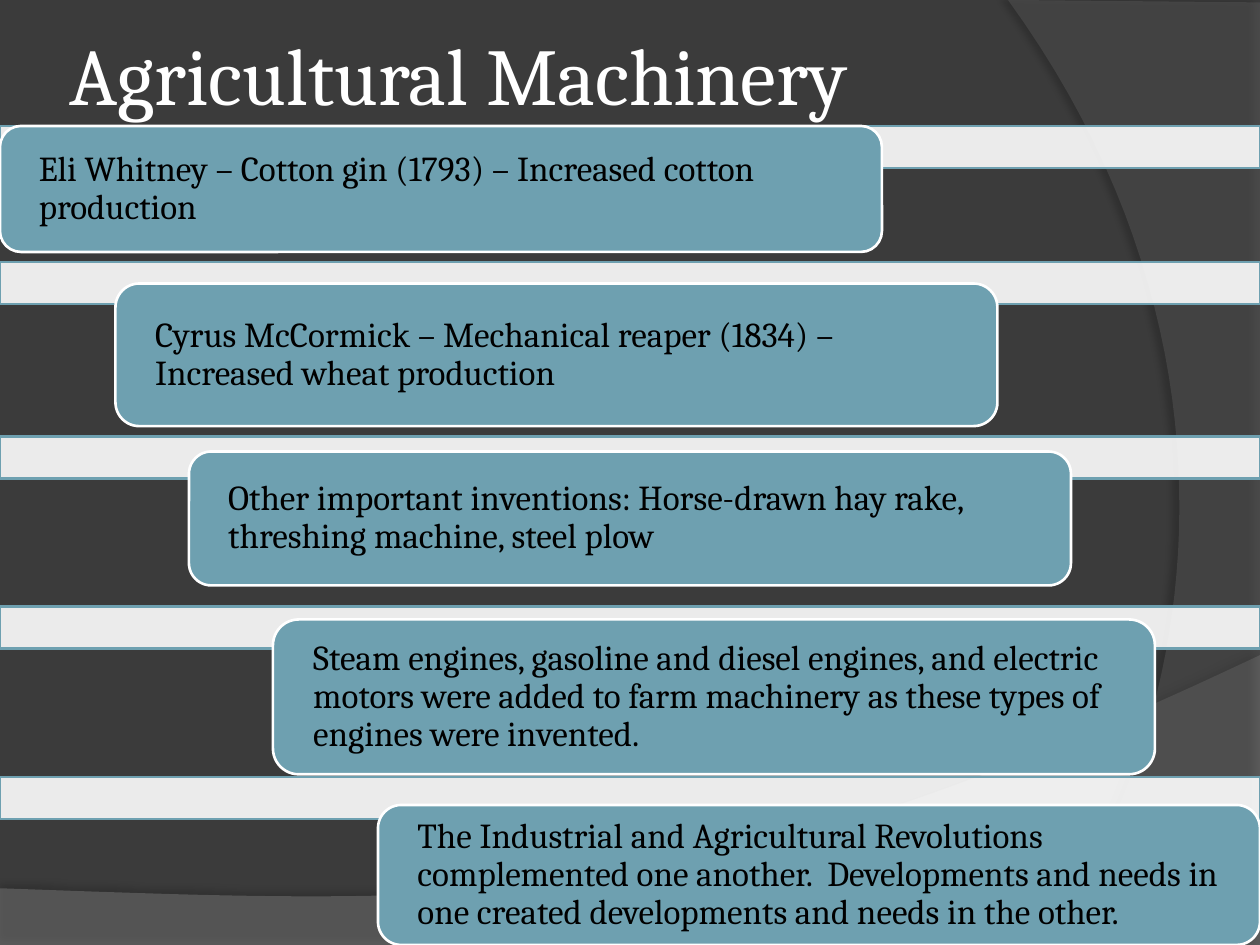
from dataclasses import dataclass

from lxml.etree import SubElement
from pptx import Presentation
from pptx.dml.color import RGBColor
from pptx.enum.shapes import MSO_SHAPE
from pptx.enum.text import MSO_ANCHOR, PP_ALIGN
from pptx.oxml.ns import qn
from pptx.util import Pt


@dataclass(frozen=True)
class Theme:
    """Colours, font and type sizes of the slide."""
    background: str = "3B3B3B"
    wave: str = "7F7F7F"
    arc: str = "5E5E5E"
    accent: str = "6EA0B0"
    light: str = "FFFFFF"
    dark: str = "000000"
    font: str = "Cambria"
    title_size: float = 46
    body_size: float = 20
    line_width: float = 1.5


THEME = Theme()
WIDTH, HEIGHT = 720, 540
BAR_HEIGHT, CARD_WIDTH = 24, 504
CARDS = [
    (72, 0, 72, 72, "Eli Whitney – Cotton gin (1793) – Increased cotton production"),
    (149.8, 66, 162, 81.5, "Cyrus McCormick – Mechanical reaper (1834) – Increased wheat production"),
    (249.5, 108, 258, 76.5, "Other important inventions: Horse-drawn hay rake, threshing machine, steel plow"),
    (346.5, 156, 354, 88.5, "Steam engines, gasoline and diesel engines, and electric motors were added "
     "to farm machinery as these types of engines were invented."),
    (444, 216, 460, 80, "The Industrial and Agricultural Revolutions complemented one another.  "
     "Developments and needs in one created developments and needs in the other."),
]


def set_format(obj, values):
    """Set each attribute of obj from a dict of format values."""
    for name, value in values.items():
        setattr(obj, name, value)


def paint(sp, color, opacity=100, line=None):
    """Give a shape its fill, opacity and outline without a theme shadow."""
    sp.shadow.inherit = False
    sp.fill.solid()
    sp.fill.fore_color.rgb = RGBColor.from_string(color)
    if opacity < 100:
        srgb = sp.fill._xPr.find(qn("a:solidFill")).find(qn("a:srgbClr"))
        SubElement(srgb, qn("a:alpha"), val=str(opacity * 1000))
    if line:
        sp.line.color.rgb = RGBColor.from_string(line)
        sp.line.width = Pt(THEME.line_width)
    else:
        sp.line.fill.background()


def add_shadow(sp, opacity, distance, angle):
    """Add a soft outer shadow cast at the given angle."""
    effects = sp._element.spPr.find(qn("a:effectLst"))
    shadow = SubElement(effects, qn("a:outerShdw"), blurRad=str(Pt(4)),
                        dist=str(Pt(distance)), dir=str(angle * 60000), rotWithShape="0")
    srgb = SubElement(shadow, qn("a:srgbClr"), val=THEME.dark)
    SubElement(srgb, qn("a:alpha"), val=str(opacity * 1000))


def write_text(sp, text, size, color, inset, spacing=1.0):
    """Write one left-aligned, vertically centred paragraph."""
    tf = sp.text_frame
    set_format(tf, {"word_wrap": True, "vertical_anchor": MSO_ANCHOR.MIDDLE,
                    "margin_left": Pt(inset), "margin_right": Pt(inset),
                    "margin_top": Pt(0), "margin_bottom": Pt(0)})
    p = tf.paragraphs[0]
    set_format(p, {"alignment": PP_ALIGN.LEFT, "line_spacing": spacing})
    r = p.add_run()
    r.text = text
    set_format(r.font, {"name": THEME.font, "size": Pt(size)})
    r.font.color.rgb = RGBColor.from_string(color)


def bezier(p0, p1, p2, p3, steps=48):
    """Return points along a cubic curve."""
    points = []
    for i in range(steps + 1):
        t = i / steps
        weights = ((1 - t) ** 3, 3 * t * (1 - t) ** 2, 3 * t ** 2 * (1 - t), t ** 3)
        points.append(tuple(sum(w * q[axis] for w, q in zip(weights, (p0, p1, p2, p3)))
                            for axis in (0, 1)))
    return points


def add_backdrop(s, points, color, opacity, shadow):
    """Draw a translucent closed outline with a shadow."""
    corners = [(Pt(x), Pt(y)) for x, y in points]
    builder = s.shapes.build_freeform(*corners[0])
    builder.add_line_segments(corners[1:], close=True)
    sp = builder.convert_to_shape()
    paint(sp, color, opacity)
    add_shadow(sp, *shadow)


def add_box(s, kind, left, top, width, height):
    """Add a preset shape placed in points."""
    return s.shapes.add_shape(kind, Pt(left), Pt(top), Pt(width), Pt(height))


def add_step(s, bar_top, left, top, height, text):
    """Add a full-width bar and the text card in front of it."""
    bar = add_box(s, MSO_SHAPE.RECTANGLE, 0, bar_top, WIDTH, BAR_HEIGHT)
    paint(bar, THEME.light, 90, THEME.accent)
    card = add_box(s, MSO_SHAPE.ROUNDED_RECTANGLE, left, top, CARD_WIDTH, height)
    paint(card, THEME.accent, line=THEME.light)
    write_text(card, text, THEME.body_size, THEME.dark, 18.7, 0.9)


def main():
    """Build the slide and save it."""
    prs = Presentation()
    set_format(prs, {"slide_width": Pt(WIDTH), "slide_height": Pt(HEIGHT)})
    s = prs.slides.add_slide(prs.slide_layouts[6])
    s.background.fill.solid()
    s.background.fill.fore_color.rgb = RGBColor.from_string(THEME.background)

    wave = bezier((720, 374.4), (402.5, 524.9), (281.5, 517.7), (0, 507.6))
    add_backdrop(s, wave + [(0, HEIGHT), (WIDTH, HEIGHT)], THEME.wave, 45, (35, 3.5, 270))
    arc = bezier((591, 540), (673.2, 445.7), (733, 216), (576, 0))
    add_backdrop(s, arc + [(WIDTH, 1.4), (WIDTH, HEIGHT)], THEME.arc, 40, (45, 4, 180))

    title = s.shapes.add_textbox(Pt(36), Pt(0), Pt(588), Pt(84))
    write_text(title, "Agricultural Machinery", THEME.title_size, THEME.light, 3.6)
    for card in CARDS:
        add_step(s, *card)
    prs.save("out.pptx")


if __name__ == "__main__":
    main()
